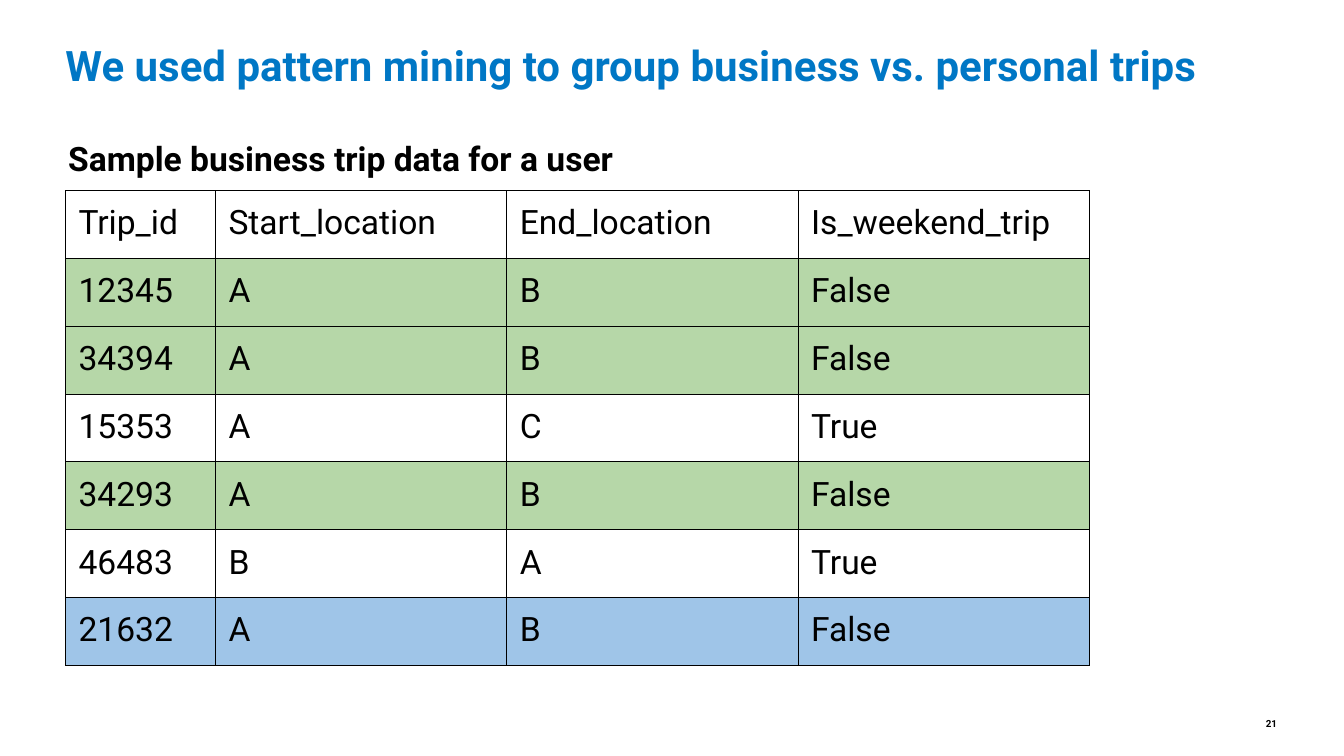
from dataclasses import dataclass

import lxml.etree
import pptx
import pptx.dml.color
import pptx.enum.shapes
import pptx.enum.text
import pptx.oxml.ns
import pptx.util

Cm = pptx.util.Cm
Pt = pptx.util.Pt
RGB = pptx.dml.color.RGBColor.from_string

TITLE = "We used pattern mining to group business vs. personal trips"
SUBTITLE = "Sample business trip data for a user"
PAGE_NUMBER = "21"
PAST_TRIPS = [
    ("Trip_id", "Start_location", "End_location", "Is_weekend_trip"),
    ("12345", "A", "B", "False"),
    ("34394", "A", "B", "False"),
    ("15353", "A", "C", "True"),
    ("34293", "A", "B", "False"),
    ("46483", "B", "A", "True"),
]
NEW_TRIP = [("21632", "A", "B", "False")]
MATCHING_BANDS = [(1, 2), (4, 1)]  # first row, number of rows


@dataclass(frozen=True)
class Theme:
    font: str = "Roboto"
    title_color: str = "0077C5"
    text_color: str = "000000"
    border_color: str = "000000"
    match_color: str = "B6D7A8"
    new_trip_color: str = "9FC5E8"
    title_size: int = 30
    text_size: int = 24
    number_size: int = 7
    border_width: float = 0.75


THEME = Theme()
TABLE_LEFT, TABLE_TOP = 1.65, 4.8
COLUMN_WIDTHS = (3.78, 7.34, 7.34, 7.34)
ROW_HEIGHT = 1.71
CELL_MARGIN = 0.33


def row_top(row):
    return TABLE_TOP + row * ROW_HEIGHT


def add_run(para, text, size, color=THEME.text_color, bold=False):
    span = para.add_run()
    span.text = text
    span.font.name = THEME.font
    span.font.size = Pt(size)
    span.font.bold = bold
    span.font.color.rgb = RGB(color)


def write_line(box, text, size, color=THEME.text_color, margin=0.25, spacing=None):
    """Fill a text shape with one bold, left-aligned, vertically centred line."""
    frame = box.text_frame
    frame.word_wrap = True
    frame.auto_size = pptx.enum.text.MSO_AUTO_SIZE.NONE
    frame.vertical_anchor = pptx.enum.text.MSO_ANCHOR.MIDDLE
    frame.margin_left = frame.margin_right = Cm(0.25)
    frame.margin_top = frame.margin_bottom = Cm(margin)
    para = frame.paragraphs[0]
    para.alignment = pptx.enum.text.PP_ALIGN.LEFT
    para.line_spacing = spacing
    add_run(para, text, size, color, bold=True)


def add_borders(cell):
    properties = cell._tc.get_or_add_tcPr()
    for side in ("lnL", "lnR", "lnT", "lnB"):
        line = lxml.etree.SubElement(
            properties, pptx.oxml.ns.qn(f"a:{side}"), w=str(Pt(THEME.border_width)))
        fill = lxml.etree.SubElement(line, pptx.oxml.ns.qn("a:solidFill"))
        lxml.etree.SubElement(
            fill, pptx.oxml.ns.qn("a:srgbClr"), val=THEME.border_color)


def add_trip_table(page, rows, first_row, fill_color=None):
    table = page.shapes.add_table(
        len(rows), len(COLUMN_WIDTHS), Cm(TABLE_LEFT), Cm(row_top(first_row)),
        Cm(sum(COLUMN_WIDTHS)), Cm(len(rows) * ROW_HEIGHT)).table
    table.first_row = table.horz_banding = False
    for column, width in zip(table.columns, COLUMN_WIDTHS):
        column.width = Cm(width)
    for table_row, values in zip(table.rows, rows):
        table_row.height = Cm(ROW_HEIGHT)
        for cell, value in zip(table_row.cells, values):
            cell.margin_left = cell.margin_right = Cm(CELL_MARGIN)
            cell.margin_top = cell.margin_bottom = Cm(CELL_MARGIN)
            add_borders(cell)
            if fill_color:
                cell.fill.solid()
                cell.fill.fore_color.rgb = RGB(fill_color)
            else:
                cell.fill.background()
            add_run(cell.text_frame.paragraphs[0], value, THEME.text_size)


def add_match_band(page, first_row, row_count):
    band = page.shapes.add_shape(
        pptx.enum.shapes.MSO_SHAPE.RECTANGLE, Cm(TABLE_LEFT), Cm(row_top(first_row)),
        Cm(sum(COLUMN_WIDTHS)), Cm(row_count * ROW_HEIGHT))
    band.shadow.inherit = False
    band.fill.solid()
    band.fill.fore_color.rgb = RGB(THEME.match_color)
    band.line.fill.background()


def main():
    deck = pptx.Presentation()
    deck.slide_width, deck.slide_height = Cm(33.87), Cm(19.05)
    page = deck.slides.add_slide(deck.slide_layouts.get_by_name("Title Only"))

    title = page.shapes.title
    title.left, title.top, title.width, title.height = Cm(1.4), Cm(0.81), Cm(32.05), Cm(1.75)
    write_line(title, TITLE, THEME.title_size, THEME.title_color, spacing=0.95)

    for first_row, row_count in MATCHING_BANDS:
        add_match_band(page, first_row, row_count)
    add_trip_table(page, PAST_TRIPS, 0)
    add_trip_table(page, NEW_TRIP, len(PAST_TRIPS), THEME.new_trip_color)

    subtitle = page.shapes.add_textbox(Cm(1.47), Cm(2.97), Cm(23.09), Cm(2.11))
    write_line(subtitle, SUBTITLE, THEME.text_size, spacing=0.95)
    number = page.shapes.add_textbox(Cm(31.65), Cm(17.98), Cm(1), Cm(0.5))
    write_line(number, PAGE_NUMBER, THEME.number_size, margin=0.13)

    deck.save("out.pptx")


if __name__ == "__main__":
    main()
